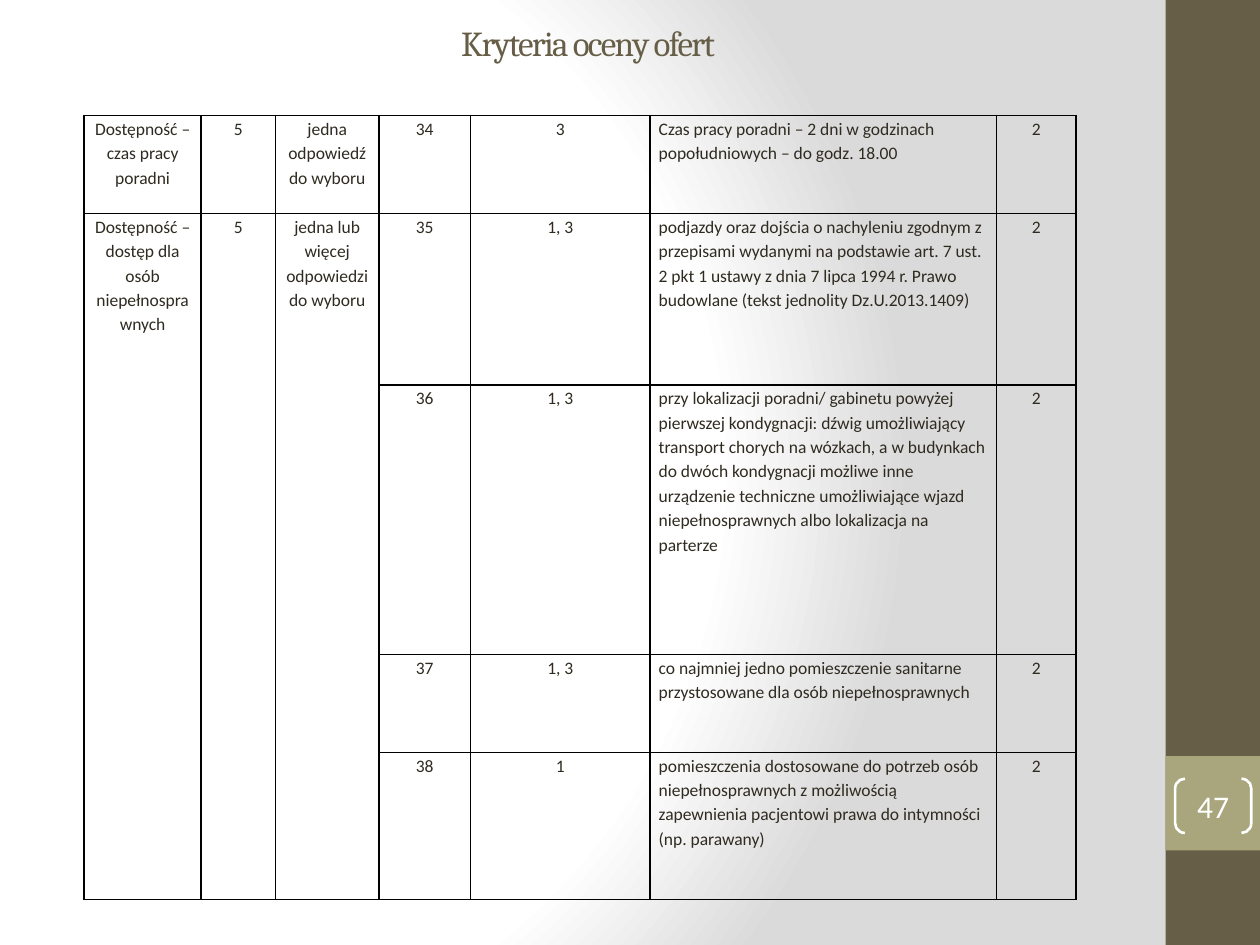
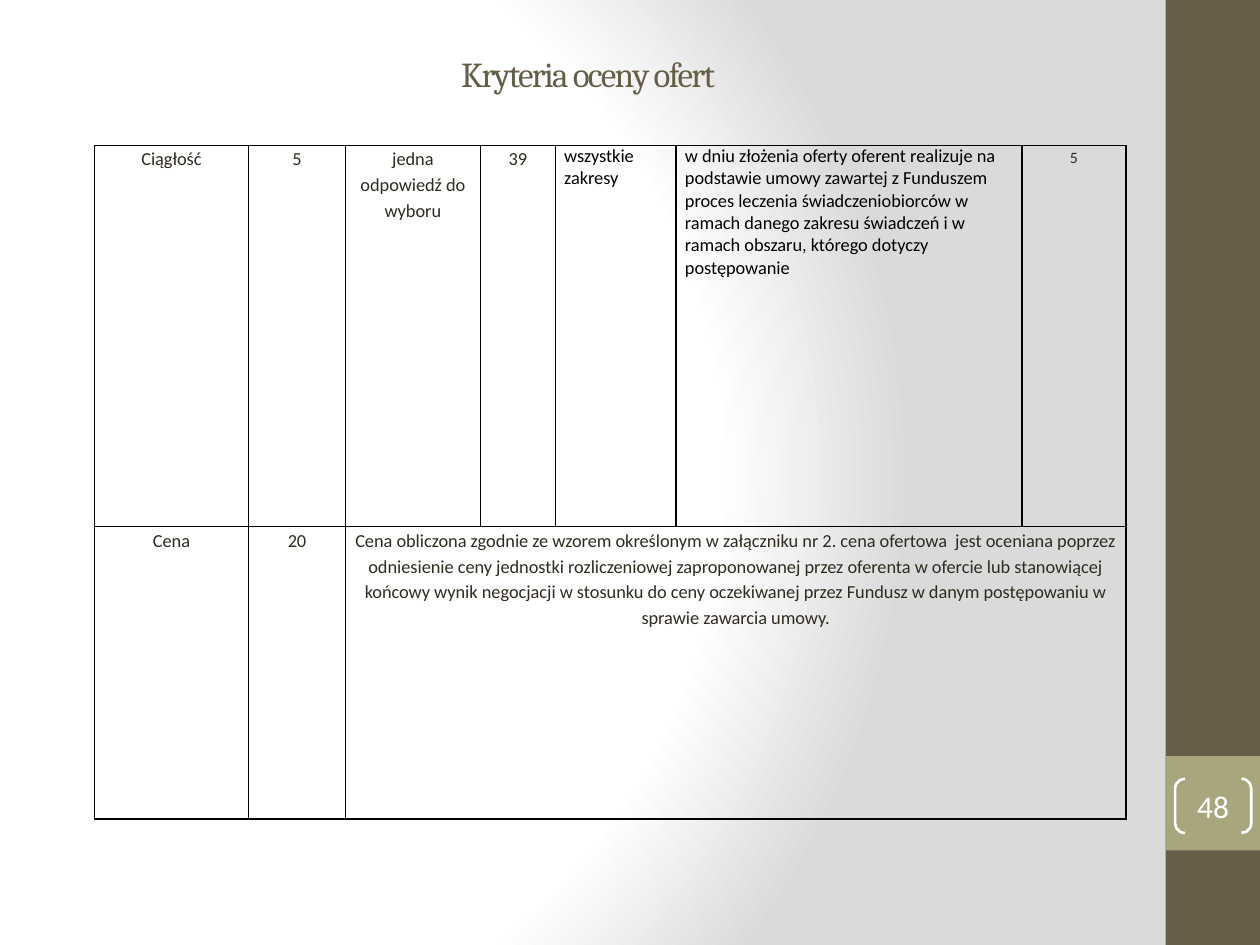
from lxml import etree
from pptx import Presentation
from pptx import util as u
from pptx.dml import color
from pptx.enum import shapes, text
from pptx.oxml import ns, parse_xml

Pt = u.Pt
COLORS = {"band": "675E47", "accent": "A9A57C", "ink": "2F2B20",
          "black": "000000", "white": "FFFFFF", "shade": "DADADA"}
FONTS = {"title": "Cambria", "body": "Calibri"}
LEFT, CENTER = text.PP_ALIGN.LEFT, text.PP_ALIGN.CENTER
MIDDLE = text.MSO_ANCHOR.MIDDLE
BAND_LEFT, BAND_WIDTH = 666, 54
TITLE = "Kryteria oceny ofert"


class Deck:
    """Holds the shared style and the current page."""

    def __init__(self):
        self.deck = Presentation()
        self.deck.slide_width, self.deck.slide_height = Pt(720), Pt(540)
        self.layout = self.deck.slide_layouts[5]
        self.page = None
        self.set_background()

    def set_background(self):
        stops = "".join(
            f'<a:gs pos="{place * 1000}"><a:srgbClr val="{COLORS[name]}"/></a:gs>'
            for place, name in ((0, "white"), (75, "white"), (100, "shade")))
        common = self.deck.slide_master.element.cSld
        for old in common.findall(ns.qn("p:bg")):
            common.remove(old)
        common.insert(0, parse_xml(
            f'<p:bg {ns.nsdecls("p", "a")}><p:bgPr><a:gradFill rotWithShape="1">'
            f'<a:gsLst>{stops}</a:gsLst><a:path path="circle">'
            '<a:fillToRect l="20000" t="50000" r="100000" b="50000"/></a:path>'
            '</a:gradFill><a:effectLst/></p:bgPr></p:bg>'))

    def add_page(self, number, title_top, title_height):
        self.page = self.deck.slides.add_slide(self.layout)
        if len(self.deck.slides) == 1:
            self.add_bands()
        self.add_title(title_top, title_height)
        self.add_number(number)

    def add_bands(self):
        """Draw the side bands and move them to the layout."""
        bands = ((0, 540, "band"), (432, 54, "accent"))
        for index, (top, height, fill) in enumerate(bands):
            band = self.add_box(shapes.MSO_SHAPE.RECTANGLE, BAND_LEFT, top,
                                BAND_WIDTH, height, fill)
            self.layout.shapes.element.insert(2 + index, band.element)

    def add_box(self, kind, left, top, width, height, fill=None, line=None):
        box = self.page.shapes.add_shape(kind, Pt(left), Pt(top), Pt(width), Pt(height))
        box.shadow.inherit = False
        if fill:
            box.fill.solid()
            box.fill.fore_color.rgb = color.RGBColor.from_string(COLORS[fill])
        else:
            box.fill.background()
        if line:
            box.line.color.rgb = color.RGBColor.from_string(COLORS[line])
            box.line.width = Pt(1.5)
        else:
            box.line.fill.background()
        return box

    def add_span(self, frame, words, size, ink="ink", font="body", align=CENTER, spacing=None):
        para = frame.paragraphs[0]
        para.alignment = align
        if spacing:
            para.line_spacing = spacing
        span = para.add_run()
        span.text = words
        span.font.size, span.font.name = Pt(size), FONTS[font]
        span.font.color.rgb = color.RGBColor.from_string(COLORS[ink])
        return span

    def add_title(self, top, height):
        box = self.page.shapes.title
        box.left, box.top, box.width, box.height = Pt(36), Pt(top), Pt(600), Pt(height)
        frame = box.text_frame
        frame.word_wrap, frame.auto_size = True, text.MSO_AUTO_SIZE.NONE
        frame.vertical_anchor = MIDDLE
        span = self.add_span(frame, TITLE, 20, "band", "title")
        span.font._element.set("spc", "-100")

    def add_number(self, number):
        box = self.add_box(shapes.MSO_SHAPE.DOUBLE_BRACKET, 671.5, 445, 43.5, 31, line="white")
        box.adjustments[0] = 0.18
        frame = box.text_frame
        frame.margin_left = frame.margin_right = frame.margin_top = frame.margin_bottom = 0
        frame.vertical_anchor = MIDDLE
        self.add_span(frame, str(number), 18, "white")

    def add_table(self, left, top, widths, heights, rows, merges, size, styles):
        """Fill a bordered table; styles override the text of single cells."""
        table = self.page.shapes.add_table(
            len(heights), len(widths), Pt(left), Pt(top),
            Pt(sum(widths)), Pt(sum(heights))).table
        table.first_row = table.horz_banding = False
        for column, width in zip(table.columns, widths):
            column.width = Pt(width)
        for row, height in zip(table.rows, heights):
            row.height = Pt(height)
        for first, last in merges:
            table.cell(*first).merge(table.cell(*last))
        for r, row in enumerate(rows):
            for c, words in enumerate(row):
                cell = table.cell(r, c)
                self.format_cell(cell)
                if words:
                    style = {"size": size, "spacing": 1.15} | styles.get((r, c), {})
                    self.add_span(cell.text_frame, words, **style)

    def format_cell(self, cell):
        cell.margin_left = cell.margin_right = Pt(5)
        cell.margin_top = cell.margin_bottom = 0
        props = cell._tc.get_or_add_tcPr()
        for side in ("lnL", "lnR", "lnT", "lnB"):
            line = etree.SubElement(props, ns.qn(f"a:{side}"), w=str(Pt(1)))
            fill = etree.SubElement(line, ns.qn("a:solidFill"))
            etree.SubElement(fill, ns.qn("a:srgbClr"), val=COLORS["black"])
        cell.fill.background()


def main():
    deck = Deck()

    # Accessibility criteria
    deck.add_page(47, 4, 40)
    skip = [None] * 3
    rows = [
        ["Dostępność – czas pracy poradni", "5", "jedna odpowiedź do wyboru", "34", "3",
         "Czas pracy poradni – 2 dni w godzinach popołudniowych – do godz. 18.00", "2"],
        ["Dostępność – dostęp dla osób niepełnosprawnych", "5",
         "jedna lub więcej odpowiedzi do wyboru", "35", "1, 3",
         "podjazdy oraz dojścia o nachyleniu zgodnym z przepisami wydanymi na podstawie "
         "art. 7 ust. 2 pkt 1 ustawy z dnia 7 lipca 1994 r. Prawo budowlane "
         "(tekst jednolity Dz.U.2013.1409)", "2"],
        [*skip, "36", "1, 3",
         "przy lokalizacji poradni/ gabinetu powyżej pierwszej kondygnacji: dźwig "
         "umożliwiający transport chorych na wózkach, a w budynkach do dwóch kondygnacji "
         "możliwe inne urządzenie techniczne umożliwiające wjazd niepełnosprawnych albo "
         "lokalizacja na parterze", "2"],
        [*skip, "37", "1, 3",
         "co najmniej jedno pomieszczenie sanitarne przystosowane dla osób "
         "niepełnosprawnych", "2"],
        [*skip, "38", "1",
         "pomieszczenia dostosowane do potrzeb osób niepełnosprawnych z możliwością "
         "zapewnienia pacjentowi prawa do intymności (np. parawany)", "2"],
    ]
    deck.add_table(48, 66, [67, 42.5, 59, 52.5, 102.5, 198, 45.5], [56, 98, 154, 56, 84],
                   rows, [((1, c), (4, c)) for c in range(3)], 10,
                   {(r, 5): {"align": LEFT} for r in range(5)})

    # Continuity and price criteria
    deck.add_page(48, 20, 44)
    rows = [
        ["Ciągłość", "5", "jedna odpowiedź do wyboru", "39", "wszystkie zakresy",
         "w dniu złożenia oferty oferent realizuje na podstawie umowy zawartej z Funduszem "
         "proces leczenia świadczeniobiorców w ramach danego zakresu świadczeń i w ramach "
         "obszaru, którego dotyczy postępowanie", "5"],
        ["Cena", "20",
         "Cena obliczona zgodnie ze wzorem określonym w załączniku nr 2. cena ofertowa  jest "
         "oceniana poprzez odniesienie ceny jednostki rozliczeniowej zaproponowanej przez "
         "oferenta w ofercie lub stanowiącej końcowy wynik negocjacji w stosunku do ceny "
         "oczekiwanej przez Fundusz w danym postępowaniu w sprawie zawarcia umowy.",
         *[None] * 4],
    ]
    plain = {"align": LEFT, "ink": "black", "spacing": None}
    deck.add_table(54, 83, [88, 55.5, 77, 43, 69, 197.5, 59.5], [218, 167],
                   rows, [((1, 2), (1, 6))], 10.5,
                   {(0, 4): plain, (0, 5): plain, (0, 6): {"size": 9}})

    deck.deck.save("out.pptx")


if __name__ == "__main__":
    main()
